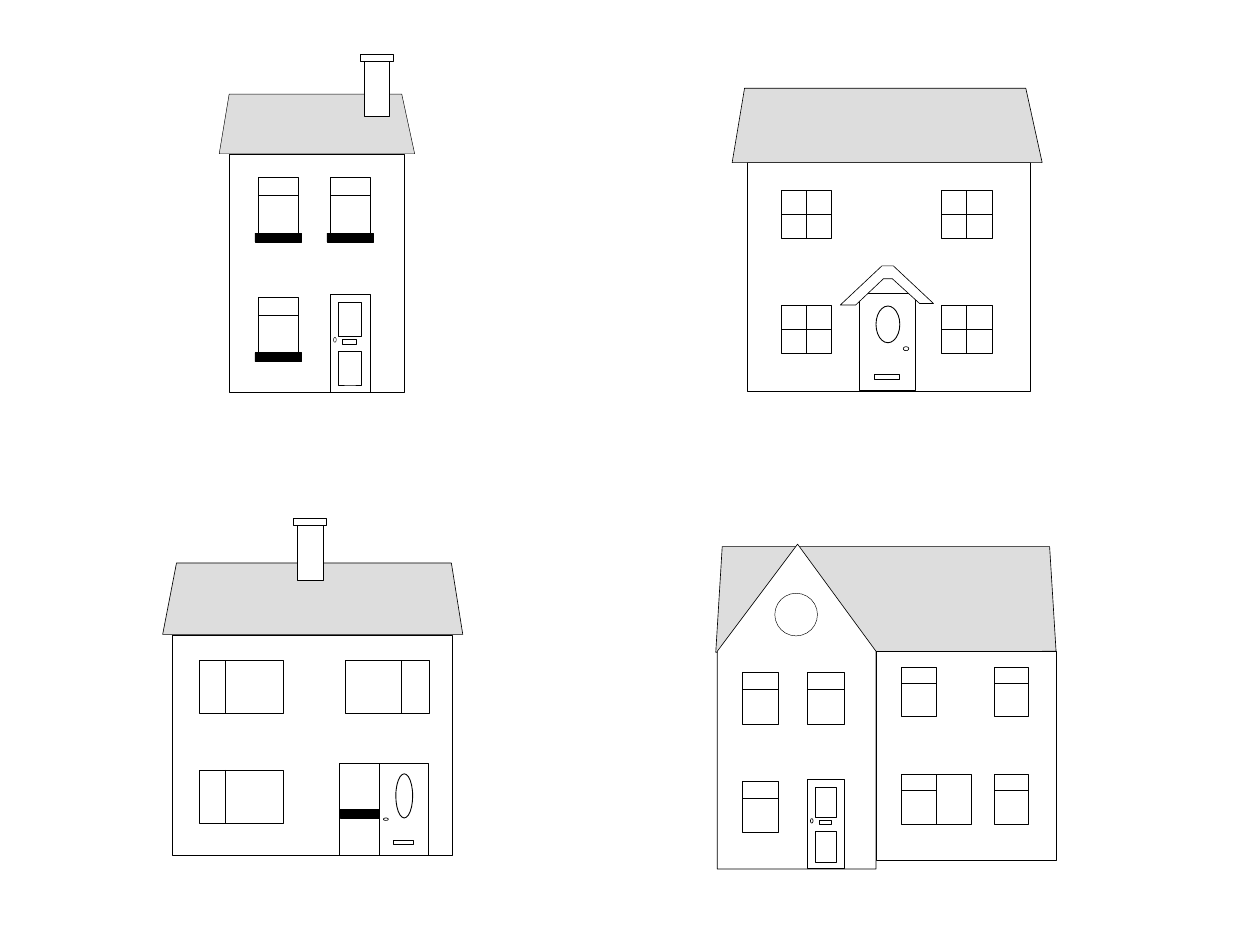
import functools

import lxml.etree
import pptx
import pptx.dml.color
import pptx.enum.shapes
import pptx.oxml.ns
import pptx.util

Cm = pptx.util.Cm
Pt = pptx.util.Pt
KIND = pptx.enum.shapes.MSO_SHAPE
LINE = pptx.enum.shapes.MSO_CONNECTOR.STRAIGHT
WHITE = pptx.dml.color.RGBColor(0xFF, 0xFF, 0xFF)
BLACK = pptx.dml.color.RGBColor(0, 0, 0)
GREY = pptx.dml.color.RGBColor(0xDD, 0xDD, 0xDD)


def format_all(shape, looks):
    """Set each dotted attribute of the shape from a dict."""
    for key, value in looks.items():
        *route, last = key.split(".")
        setattr(functools.reduce(getattr, route, shape), last, value)


class Plot:
    """A group for one house, measured in cm from its top left corner."""

    def __init__(self, slide, left, top, pen):
        """Open the group and keep its corner and line width."""
        self.shapes = slide.shapes.add_group_shape().shapes
        self.left, self.top, self.pen = left, top, pen

    def spot(self, x, y):
        """Turn a point of the plot into slide lengths."""
        return Cm(self.left + x), Cm(self.top + y)

    def paint(self, shape, fill, pen=None):
        """Give a shape its fill and black outline."""
        shape.fill.solid()
        format_all(shape, {
            "shadow.inherit": False,
            "fill.fore_color.rgb": fill,
            "line.color.rgb": BLACK,
            "line.width": Pt(pen or self.pen),
        })
        return shape

    def box(self, x, y, w, h, fill=WHITE, kind=KIND.RECTANGLE, pen=None):
        """Add a preset shape."""
        shape = self.shapes.add_shape(kind, *self.spot(x, y), Cm(w), Cm(h))
        return self.paint(shape, fill, pen)

    def oval(self, x, y, w, h, pen=None):
        """Add a white ellipse."""
        return self.box(x, y, w, h, kind=KIND.OVAL, pen=pen)

    def shell(self, points, fill=WHITE):
        """Add a closed outline through the points."""
        start, *rest = [self.spot(*point) for point in points]
        pen = self.shapes.build_freeform(*start, scale=1.0)
        pen.add_line_segments(rest, close=True)
        return self.paint(pen.convert_to_shape(), fill)

    def rule(self, start, end, pen):
        """Add a thin black line."""
        line = self.shapes.add_connector(LINE, *self.spot(*start), *self.spot(*end))
        format_all(line, {"line.color.rgb": BLACK, "line.width": Pt(pen)})
        lxml.etree.SubElement(line._element.spPr, pptx.oxml.ns.qn("a:effectLst"))
        return line


def add_sash(plot, x, y, w, h):
    """Draw a window with a bar near its top."""
    plot.box(x, y, w, h)
    bar = y + 0.32 * h
    plot.rule((x, bar), (x + w, bar), 0.25)


def add_cross(plot, x, y, w, h):
    """Draw a window of four panes."""
    frame = plot.box(x, y, w, h)
    for first, last in ((1, 3), (0, 2)):
        line = plot.rule((x, y), (x + w, y + h), 0.5)
        line.begin_connect(frame, first)
        line.end_connect(frame, last)


def add_split(plot, x, y, w, h, gap):
    """Draw a frame with an upright bar at the given gap."""
    plot.box(x, y, w, h)
    plot.rule((x + gap, y), (x + gap, y + h), 0.5)


def add_door(plot, x, y, w, h):
    """Draw a door with two panels, a knob and a letter slot."""
    plot.box(x, y, w, h)
    for drop in (0.08, 0.58):
        plot.box(x + 0.21 * w, y + drop * h, 0.58 * w, 0.35 * h)
    plot.oval(x + 0.08 * w, y + 0.44 * h, 0.07 * w, 0.05 * h)
    plot.box(x + 0.31 * w, y + 0.46 * h, 0.35 * w, 0.05 * h)


def add_stack(plot, x, y):
    """Draw a chimney with its cap."""
    plot.box(x + 0.08, y + 0.15, 0.51, 1.11)
    plot.box(x, y, 0.66, 0.15)


def add_narrow(slide, left, top):
    """Draw the narrow house with black sills."""
    plot = Plot(slide, left, top, 0.25)
    plot.box(0.2, 2.01, 3.53, 4.8)
    for x, y in ((0.79, 2.49), (2.24, 2.49), (0.79, 4.9)):
        add_sash(plot, x, y, 0.8, 1.14)
        plot.box(x - 0.07, y + 1.12, 0.94, 0.18, BLACK)
    add_door(plot, 2.24, 4.85, 0.8, 1.96)
    plot.shell([(3.68, 0.81), (0.2, 0.81), (0, 2.01), (3.94, 2.01)], GREY)
    add_stack(plot, 2.84, 0)


def add_porch(slide, left, top):
    """Draw the wide house with a porch."""
    plot = Plot(slide, left, top, 0.38)
    plot.box(0.3, 1.5, 5.72, 4.62)
    plot.shell([(6.25, 1.5), (0, 1.5), (0.25, 0), (5.92, 0)], GREY)
    for y in (2.06, 4.37):
        for x in (0.99, 4.22):
            add_cross(plot, x, y, 1.02, 0.97)
    plot.box(2.57, 4.14, 1.12, 1.96)
    plot.oval(3.45, 5.21, 0.11, 0.08)
    plot.box(2.87, 5.77, 0.51, 0.1)
    plot.shell([(2.18, 4.37), (3.02, 3.58), (3.25, 3.58), (4.06, 4.34),
                (3.78, 4.34), (3.23, 3.84), (3.05, 3.84), (2.49, 4.37)])
    plot.oval(2.9, 4.39, 0.48, 0.74, 0.5)


def add_modern(slide, left, top):
    """Draw the wide house with split windows."""
    plot = Plot(slide, left, top, 0.38)
    plot.box(0.2, 2.36, 5.64, 4.45)
    for x, y, gap in ((0.74, 2.87, 0.53), (0.74, 5.08, 0.53), (3.68, 2.87, 1.14)):
        add_split(plot, x, y, 1.7, 1.08, gap)
    add_split(plot, 3.56, 4.95, 1.8, 1.85, 0.81)
    plot.oval(4.45, 6.05, 0.1, 0.05)
    plot.box(4.65, 6.5, 0.41, 0.08)
    plot.box(3.58, 5.87, 0.79, 0.18, BLACK)
    plot.oval(4.7, 5.16, 0.34, 0.89, 0.5)
    plot.shell([(5.82, 0.91), (0.28, 0.91), (0, 2.35), (6.05, 2.35)], GREY)
    add_stack(plot, 2.64, 0)


def add_gable(slide, left, top):
    """Draw the house with a front gable and a side wing."""
    plot = Plot(slide, left, top, 0.38)
    plot.shell([(6.73, 0.05), (0.13, 0.05), (0, 2.18), (6.86, 2.16)], GREY)
    plot.shell([(3.23, 6.55), (0.03, 6.55), (0.03, 2.16), (1.65, 0), (3.23, 2.16)])
    for x, y in ((0.53, 2.59), (1.85, 2.59), (0.53, 4.78)):
        add_sash(plot, x, y, 0.74, 1.04)
    add_door(plot, 1.85, 4.75, 0.74, 1.78)
    plot.box(3.23, 2.16, 3.63, 4.22)
    for y in (2.49, 4.65):
        for x in (3.75, 5.61):
            add_sash(plot, x, y, 0.7, 0.99)
    plot.box(4.45, 4.65, 0.7, 0.99)
    plot.oval(1.19, 0.99, 0.86, 0.86, 0.25)


def main():
    """Build the slide of four houses."""
    deck = pptx.Presentation()
    format_all(deck, {"slide_width": Cm(25.4), "slide_height": Cm(19.05)})
    slide = deck.slides.add_slide(deck.slide_layouts[6])
    add_narrow(slide, 4.42, 1.09)
    add_porch(slide, 14.76, 1.78)
    add_modern(slide, 3.28, 10.44)
    add_gable(slide, 14.43, 10.97)
    deck.save("out.pptx")


if __name__ == "__main__":
    main()
